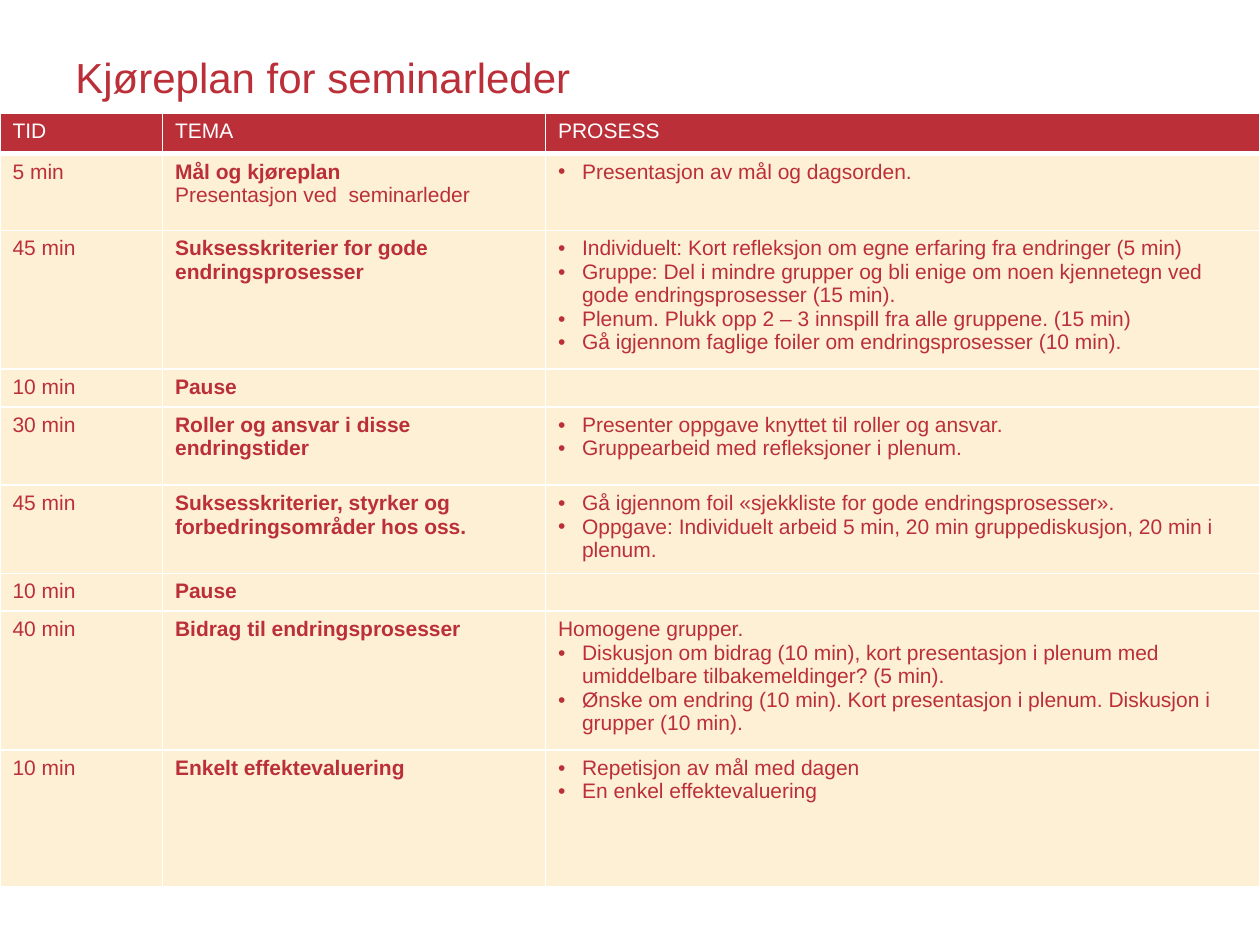
from dataclasses import dataclass

from lxml.etree import SubElement
from pptx import Presentation
from pptx.dml.color import RGBColor
from pptx.enum.text import MSO_ANCHOR
from pptx.oxml.ns import qn
from pptx.util import Inches, Pt


@dataclass(frozen=True)
class Theme:
    font: str = "Arial"
    red: str = "BB2F38"
    cream: str = "FDF0D5"
    white: str = "FFFFFF"
    title_size: int = 24
    table_size: int = 12
    border: int = 1
    header_border: int = 3


THEME = Theme()
BULLET = "• "
BULLET_INDENT = Inches(0.19)
HEADER = ("TID", "TEMA", "PROSESS")
COLUMN_WIDTHS = (1.29, 3.04, 5.67)
HEADER_HEIGHT = 0.32

# Row height, time, theme (bold), theme details, process lines
AGENDA = [
    (0.61, "5 min", "Mål og kjøreplan", ["Presentasjon ved  seminarleder"],
     ["• Presentasjon av mål og dagsorden."]),
    (1.01, "45 min", "Suksesskriterier for gode endringsprosesser", [],
     ["• Individuelt: Kort refleksjon om egne erfaring fra endringer (5 min)",
      "• Gruppe: Del i mindre grupper og bli enige om noen kjennetegn ved "
      "gode endringsprosesser (15 min).",
      "• Plenum. Plukk opp 2 – 3 innspill fra alle gruppene. (15 min)",
      "• Gå igjennom faglige foiler om endringsprosesser (10 min)."]),
    (0.27, "10 min", "Pause", [], []),
    (0.62, "30 min", "Roller og ansvar i disse endringstider", [],
     ["• Presenter oppgave knyttet til roller og ansvar.",
      "• Gruppearbeid med refleksjoner i plenum."]),
    (0.64, "45 min", "Suksesskriterier, styrker og forbedringsområder hos oss.", [],
     ["• Gå igjennom foil «sjekkliste for gode endringsprosesser».",
      "• Oppgave: Individuelt arbeid 5 min, 20 min gruppediskusjon, 20 min i plenum."]),
    (0.29, "10 min", "Pause", [], []),
    (1.09, "40 min", "Bidrag til endringsprosesser", [],
     ["Homogene grupper.",
      "• Diskusjon om bidrag (10 min), kort presentasjon i plenum med "
      "umiddelbare tilbakemeldinger? (5 min).",
      "• Ønske om endring (10 min). Kort presentasjon i plenum. Diskusjon i "
      "grupper (10 min)."]),
    (1.09, "10 min", "Enkelt effektevaluering", [],
     ["• Repetisjon av mål med dagen", "• En enkel effektevaluering"]),
]


def format_runs(paragraph, size, color, bold=False):
    for run in paragraph.runs:
        run.font.name = THEME.font
        run.font.size = Pt(size)
        run.font.bold = bold
        run.font.color.rgb = RGBColor.from_string(color)


def add_bullet(paragraph):
    properties = paragraph._p.get_or_add_pPr()
    properties.set("marL", str(BULLET_INDENT))
    properties.set("indent", str(-BULLET_INDENT))
    SubElement(properties, qn("a:buFont"), typeface=THEME.font)
    SubElement(properties, qn("a:buChar"), char=BULLET.strip())


def add_borders(cell, bottom_width):
    properties = cell._tc.get_or_add_tcPr()
    widths = {"L": THEME.border, "R": THEME.border, "T": THEME.border, "B": bottom_width}
    for side, width in widths.items():
        line = SubElement(properties, qn(f"a:ln{side}"), w=str(Pt(width)))
        fill = SubElement(line, qn("a:solidFill"))
        SubElement(fill, qn("a:srgbClr"), val=THEME.white)


def fill_cell(cell, lines, bold_first=False, is_header=False):
    """Write the lines as paragraphs, with bullets where marked, and style the cell."""
    add_borders(cell, THEME.header_border if is_header else THEME.border)
    cell.fill.solid()
    cell.fill.fore_color.rgb = RGBColor.from_string(THEME.red if is_header else THEME.cream)
    text_color = THEME.white if is_header else THEME.red
    text_frame = cell.text_frame
    text_frame.text = "\n".join(line.removeprefix(BULLET) for line in lines)
    if not lines:
        # An empty cell still needs the type size, so that its row stays low
        SubElement(text_frame.paragraphs[0]._p, qn("a:endParaRPr"),
                   sz=str(THEME.table_size * 100))
    for index, (paragraph, line) in enumerate(zip(text_frame.paragraphs, lines)):
        if line.startswith(BULLET):
            add_bullet(paragraph)
        format_runs(paragraph, THEME.table_size, text_color, bold_first and index == 0)


def add_title(slide, text):
    shape = slide.shapes.add_textbox(Inches(0.5), Inches(0.32), Inches(9), Inches(0.58))
    text_frame = shape.text_frame
    text_frame.word_wrap = True
    text_frame.vertical_anchor = MSO_ANCHOR.MIDDLE
    text_frame.text = text
    format_runs(text_frame.paragraphs[0], THEME.title_size, THEME.red)


def add_agenda_table(slide):
    heights = [HEADER_HEIGHT] + [row[0] for row in AGENDA]
    table = slide.shapes.add_table(
        len(heights), len(HEADER), Inches(0), Inches(0.9),
        Inches(sum(COLUMN_WIDTHS)), Inches(sum(heights))).table
    table.first_row = False
    table.horz_banding = False
    for column, width in zip(table.columns, COLUMN_WIDTHS):
        column.width = Inches(width)
    for row, height in zip(table.rows, heights):
        row.height = Inches(height)
    for column_index, heading in enumerate(HEADER):
        fill_cell(table.cell(0, column_index), [heading], is_header=True)
    for row_index, (_, time, theme, details, process) in enumerate(AGENDA, start=1):
        fill_cell(table.cell(row_index, 0), [time])
        fill_cell(table.cell(row_index, 1), [theme, *details], bold_first=True)
        fill_cell(table.cell(row_index, 2), process)


def main():
    presentation = Presentation()
    presentation.slide_width = Inches(10)
    presentation.slide_height = Inches(7.5)
    slide = presentation.slides.add_slide(presentation.slide_layouts[6])
    add_title(slide, "Kjøreplan for seminarleder")
    add_agenda_table(slide)
    presentation.save("out.pptx")


if __name__ == "__main__":
    main()
